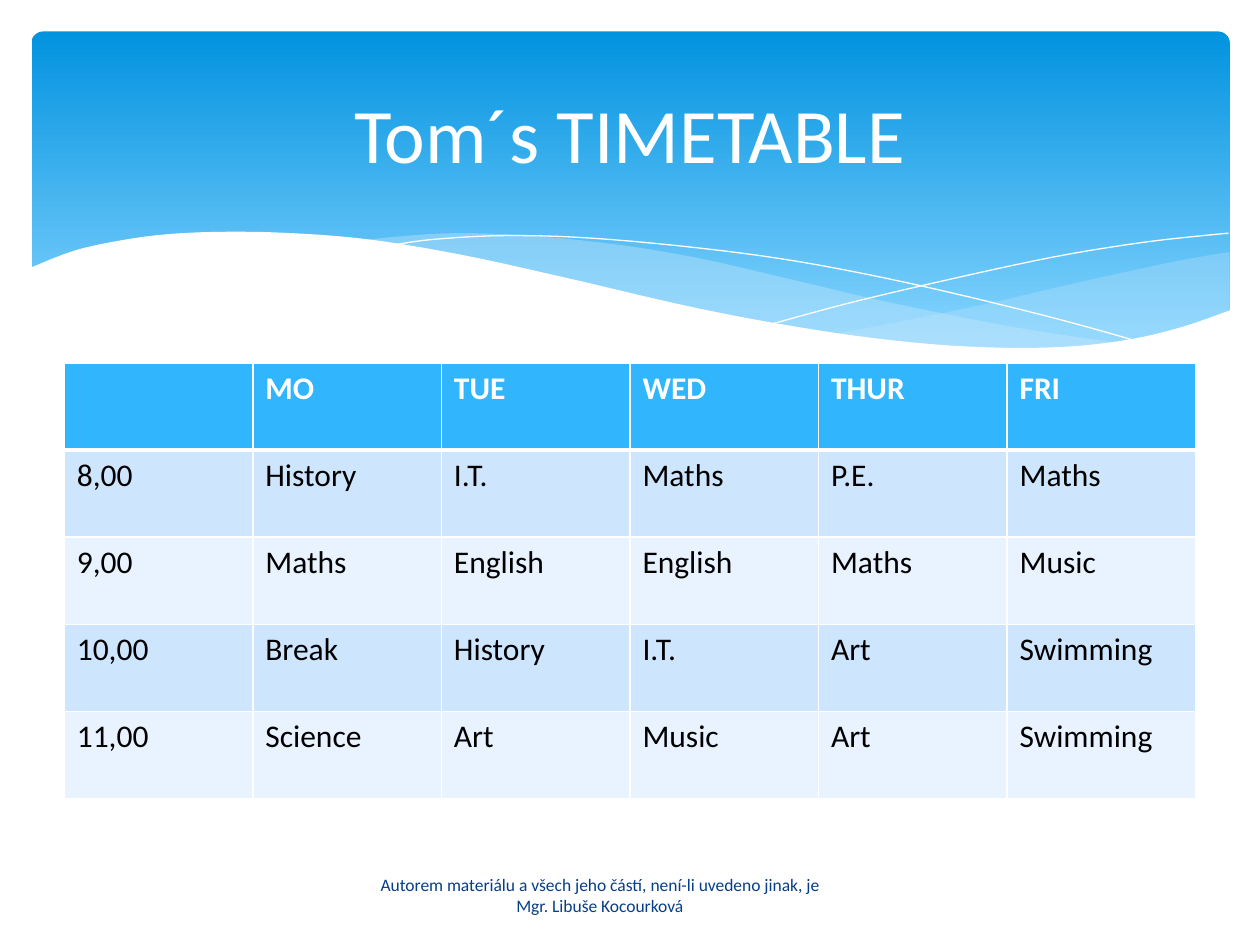
from lxml.etree import SubElement
from pptx import Presentation
from pptx.dml.color import RGBColor
from pptx.enum.shapes import MSO_SHAPE
from pptx.enum.text import MSO_ANCHOR, PP_ALIGN
from pptx.oxml.ns import qn
from pptx.util import Inches, Pt

WHITE = "FFFFFF"
HEAD = "31B6FD"
BANDS = ["CEE5FE", "E8F3FF"]
MIST = "C6E7FC"

FONTS = {
    "title": {"size": Pt(44), "name": "Calibri", "bold": False},
    "head": {"size": Pt(18), "name": "Calibri", "bold": True},
    "body": {"size": Pt(18), "name": "Calibri", "bold": False},
    "foot": {"size": Pt(10), "name": "Calibri", "bold": False},
}
CENTRE = {"word_wrap": True, "vertical_anchor": MSO_ANCHOR.MIDDLE}

ROWS = [
    ["", "MO", "TUE", "WED", "THUR", "FRI"],
    ["8,00", "History", "I.T.", "Maths", "P.E.", "Maths"],
    ["9,00", "Maths", "English", "English", "Maths", "Music"],
    ["10,00", "Break", "History", "I.T.", "Art", "Swimming"],
    ["11,00", "Science", "Art", "Music", "Art", "Swimming"],
]

RIGHT = [
    [(9.76, 2), (9.35, 2.07), (8.61, 2.23), (7.79, 2.42), (7.06, 2.57), (6.61, 2.65)],
    [(6.61, 2.65), (7.05, 2.71), (7.57, 2.76), (8.14, 2.78), (8.63, 2.75),
     (9.13, 2.67), (9.49, 2.57), (9.76, 2.47)],
]
MIDDLE = [
    [(8.93, 2.73), (8.07, 2.6), (7.06, 2.4), (6.29, 2.22), (5.55, 2.05), (4.89, 1.94),
     (4.2, 1.87), (3.61, 1.85), (3.13, 1.88), (2.86, 1.91)],
    [(2.86, 1.91), (3.42, 1.99), (4.04, 2.11), (4.91, 2.32), (5.66, 2.48), (6.34, 2.61),
     (6.95, 2.7), (7.48, 2.76), (8.07, 2.78), (8.57, 2.77), (8.93, 2.73)],
]
FALL = [[(3.09, 1.95), (3.44, 1.9), (4.01, 1.87), (4.69, 1.89), (5.56, 1.97),
         (6.36, 2.08), (7.27, 2.26), (8.31, 2.51), (9.07, 2.72)]]
RISE = [[(6.13, 2.57), (6.72, 2.41), (7.48, 2.23), (8.36, 2.04), (9.1, 1.92), (9.75, 1.85)]]
FRONT = [
    [(9.77, 2.46), (9.4, 2.59), (8.99, 2.69), (8.5, 2.75), (7.93, 2.76), (7.26, 2.72),
     (6.48, 2.62), (5.55, 2.45), (4.47, 2.2), (3.65, 2.02), (2.92, 1.9), (2.3, 1.85),
     (1.77, 1.84), (1.32, 1.86), (0.95, 1.91), (0.59, 1.99), (0.23, 2.13)],
    [(0.23, 3.29), (9.77, 3.29)],
]


def rgb(code):
    return RGBColor.from_string(code)


def apply(item, values):
    for key, value in values.items():
        setattr(item, key, value)


def write(frame, text, style, color, align=PP_ALIGN.LEFT):
    para = frame.paragraphs[0]
    para.alignment = align
    run = para.add_run()
    run.text = text
    apply(run.font, FONTS[style])
    run.font.color.rgb = rgb(color)


def smooth(knots, steps=5):
    if len(knots) < 3:
        return knots
    ends = [knots[0], *knots, knots[-1]]
    points = [knots[0]]
    for a, b, c, d in zip(ends, ends[1:], ends[2:], ends[3:]):
        for step in range(1, steps + 1):
            t = step / steps
            points.append(tuple(
                (2 * q + (r - p) * t + (2 * p - 5 * q + 4 * r - s) * t ** 2
                 + (3 * q - p - 3 * r + s) * t ** 3) / 2
                for p, q, r, s in zip(a, b, c, d)))
    return points


def draw_wave(slide, parts, fill=None, alpha=None):
    points = [(Inches(x), Inches(y)) for part in parts for x, y in smooth(part)]
    pen = slide.shapes.build_freeform(*points[0], scale=1.0)
    pen.add_line_segments(points[1:], close=fill is not None)
    wave = pen.convert_to_shape()
    wave.shadow.inherit = False
    if fill is None:
        wave.fill.background()
        wave.line.color.rgb = rgb(WHITE)
        wave.line.width = Pt(0)
        return
    wave.fill.solid()
    wave.fill.fore_color.rgb = rgb(fill)
    wave.line.fill.background()
    if alpha:
        color = wave.element.spPr.find(qn("a:solidFill"))[0]
        SubElement(color, qn("a:alpha"), val=str(alpha * 1000))


def draw_banner(slide, box):
    panel = slide.shapes.add_shape(MSO_SHAPE.ROUNDED_RECTANGLE, *box)
    panel.adjustments[0] = 0.034
    panel.shadow.inherit = False
    panel.line.fill.background()
    panel.fill.gradient()
    panel.fill.gradient_angle = 270
    stops = [(0, "0293E0"), (0.9, "83D3FE")]
    for stop, (place, color) in zip(panel.fill.gradient_stops, stops):
        stop.position = place
        stop.color.rgb = rgb(color)
    draw_wave(slide, RIGHT, MIST, 29)
    draw_wave(slide, MIDDLE, MIST, 40)
    draw_wave(slide, FALL)
    draw_wave(slide, RISE)
    draw_wave(slide, FRONT, WHITE)


def edge_cell(cell, widths):
    props = cell._tc.get_or_add_tcPr()
    for side, width in widths.items():
        line = SubElement(props, qn(f"a:ln{side}"), w=str(Pt(width)))
        fill = SubElement(line, qn("a:solidFill"))
        SubElement(fill, qn("a:srgbClr"), val=WHITE)


def draw_table(slide, box):
    table = slide.shapes.add_table(len(ROWS), len(ROWS[0]), *box).table
    for col in table.columns:
        col.width = box[2] // len(ROWS[0])
    for row in table.rows:
        row.height = box[3] // len(ROWS)
    for i, row in enumerate(ROWS):
        style, color = ("body", "000000") if i else ("head", WHITE)
        for j, text in enumerate(row):
            cell = table.cell(i, j)
            edge_cell(cell, {"L": 1, "R": 1, "T": 3 if i == 1 else 1, "B": 1 if i else 3})
            cell.fill.solid()
            cell.fill.fore_color.rgb = rgb(BANDS[(i - 1) % 2] if i else HEAD)
            if text:
                write(cell.text_frame, text, style, color)


def place_title(slide, box):
    title = slide.shapes.title
    apply(title, dict(zip(["left", "top", "width", "height"], box)))
    slide.shapes.element.append(title.element)
    apply(title.text_frame, CENTRE)
    write(title.text_frame, "Tom´s TIMETABLE", "title", WHITE, PP_ALIGN.CENTER)


def place_foot(slide, box):
    frame = slide.shapes.add_textbox(*box).text_frame
    apply(frame, CENTRE)
    text = "Autorem materiálu a všech jeho částí, není-li uvedeno jinak, je Mgr. Libuše Kocourková"
    write(frame, text, "foot", "073E87", PP_ALIGN.CENTER)


def main():
    deck = Presentation()
    deck.slide_width, deck.slide_height = Inches(10), Inches(7.5)
    slide = deck.slides.add_slide(deck.slide_layouts[5])
    regions = [
        (draw_banner, (0.25, 0.25, 9.51, 2.7)),
        (draw_table, (0.51, 2.88, 8.98, 3.46)),
        (place_title, (0.5, 0.37, 9, 1.37)),
        (place_foot, (2.87, 6.9, 3.78, 0.4)),
    ]
    for build, box in regions:
        build(slide, [Inches(n) for n in box])
    deck.save("out.pptx")


if __name__ == "__main__":
    main()
